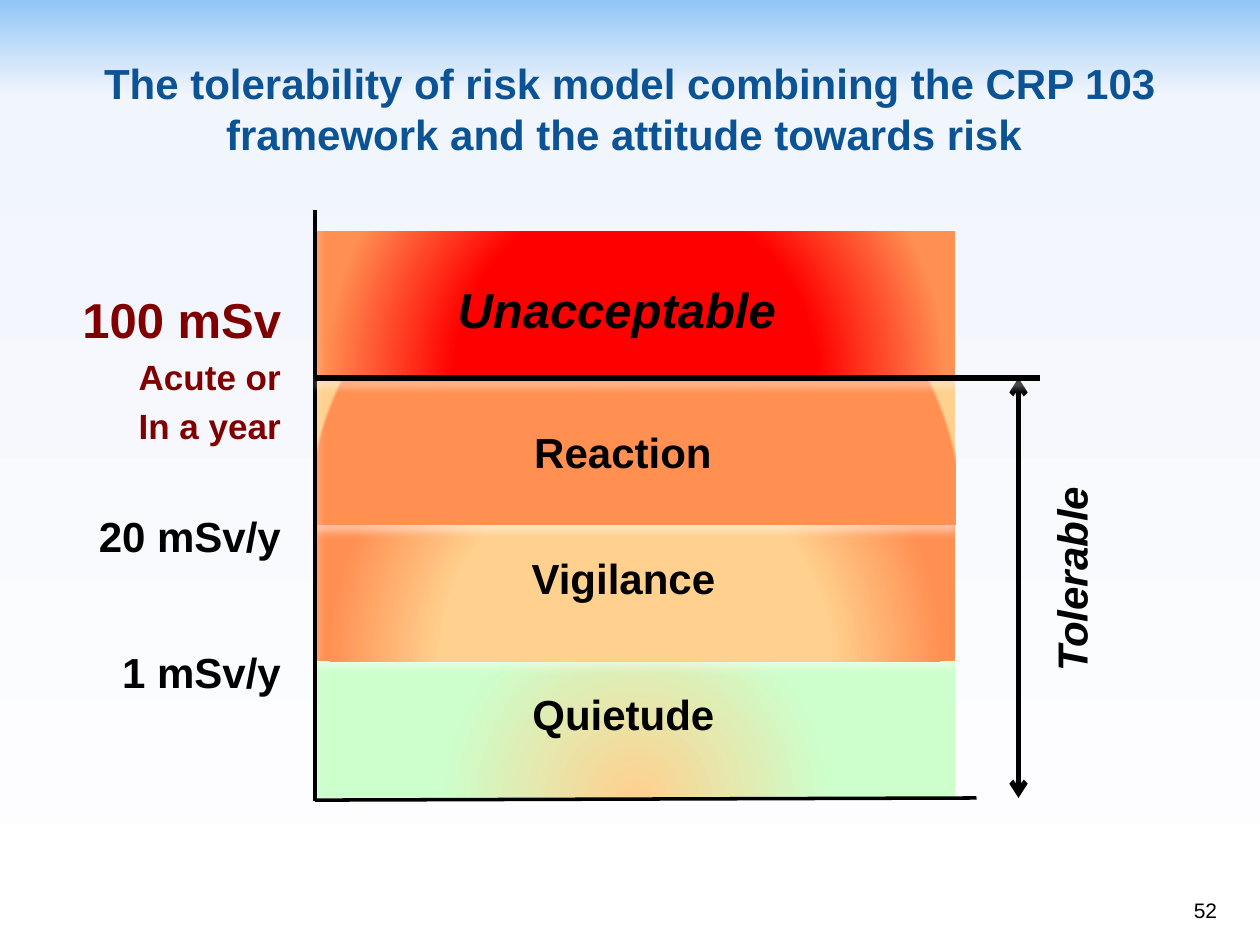
from lxml.etree import SubElement
from pptx import Presentation
from pptx.dml.color import RGBColor
from pptx.enum.shapes import MSO_CONNECTOR as Connector, MSO_SHAPE as Shape
from pptx.enum.text import MSO_ANCHOR as Anchor, PP_ALIGN as Align
from pptx.oxml.ns import qn
from pptx.util import Inches, Pt

BLACK = RGBColor(0x00, 0x00, 0x00)
WHITE = RGBColor(0xFF, 0xFF, 0xFF)
SKY = RGBColor(0x91, 0xC6, 0xF7)
MIST = RGBColor(0xF1, 0xF5, 0xFC)
NAVY = RGBColor(0x0B, 0x53, 0x94)
MAROON = RGBColor(0x80, 0x00, 0x00)
RED = RGBColor(0xFF, 0x00, 0x00)
ORANGE = RGBColor(0xFF, 0x90, 0x52)
SAND = RGBColor(0xFF, 0xD0, 0x8E)
MINT = RGBColor(0xCC, 0xFF, 0xCC)

COLUMNS, ROWS = 120, 90
AXIS, BAND_WIDTH, LIMIT, BASE = 30, 61, 36, 76
LABEL_LEFT, LABEL_WIDTH, LABEL_HEIGHT = 6, 21, 6.8


class RiskSlide:
    font = "Arial"

    def __init__(self, presentation):
        self.column = presentation.slide_width / COLUMNS
        self.row = presentation.slide_height / ROWS
        self.slide = presentation.slides.add_slide(presentation.slide_layouts[6])

    def place(self, left, top, width, height):
        return (round(left * self.column), round(top * self.row),
                round(width * self.column), round(height * self.row))

    def set_stops(self, owner, stops):
        """Replace the stops of the gradient inside owner and return the gradient."""
        gradient = owner.find(".//" + qn("a:gradFill"))
        stop_list = gradient.find(qn("a:gsLst"))
        for stop in list(stop_list):
            stop_list.remove(stop)
        for percent, color in stops:
            stop = SubElement(stop_list, qn("a:gs"), pos=str(percent * 1000))
            SubElement(stop, qn("a:srgbClr"), val=str(color))
        return gradient

    def background(self, stops):
        fill = self.slide.background.fill
        fill.gradient()
        fill.gradient_angle = 270
        self.set_stops(self.slide.element, stops)

    def add_glow(self, effects):
        """Give an effect list a soft pale shadow falling downwards."""
        shadow = SubElement(effects, qn("a:outerShdw"), blurRad=str(Pt(4.5)),
                            dist=str(Pt(3)), dir="5400000", rotWithShape="0")
        color = SubElement(shadow, qn("a:srgbClr"), val=str(WHITE))
        SubElement(color, qn("a:alpha"), val="48000")

    def band(self, top, height, stops):
        """Draw a band whose circular gradient starts at the middle of its base."""
        shape = self.slide.shapes.add_shape(
            Shape.RECTANGLE, *self.place(AXIS, top, BAND_WIDTH, height))
        shape.fill.gradient()
        gradient = self.set_stops(shape.element, stops)
        gradient.remove(gradient.find(qn("a:lin")))
        circle = SubElement(gradient, qn("a:path"), path="circle")
        SubElement(circle, qn("a:fillToRect"), l="50000", t="100000", r="50000")
        shape.line.fill.background()
        shape.shadow.inherit = False
        self.add_glow(shape.element.spPr.find(qn("a:effectLst")))

    def line(self, start, end, weight, arrows=False):
        connector = self.slide.shapes.add_connector(
            Connector.STRAIGHT, *self.place(*start, *end))
        connector.line.color.rgb = BLACK
        connector.line.width = Pt(weight)
        if arrows:
            outline = connector.line._get_or_add_ln()
            for tag in ("a:headEnd", "a:tailEnd"):
                SubElement(outline, qn(tag), type="arrow")
        self.add_glow(SubElement(connector.element.spPr, qn("a:effectLst")))

    def text(self, box, paragraphs, align=Align.CENTER, color=BLACK, bold=True,
             italic=False, anchor=Anchor.TOP, wrap=False, rotation=0,
             margins=(0, 0.05, 0.02, 0.05)):
        """Write paragraphs given as (text, size); a newline is a line break."""
        shape = self.slide.shapes.add_textbox(*self.place(*box))
        shape.rotation = rotation
        frame = shape.text_frame
        frame.word_wrap = wrap
        frame.vertical_anchor = anchor
        (frame.margin_left, frame.margin_top,
         frame.margin_right, frame.margin_bottom) = map(Inches, margins)
        for index, (content, size) in enumerate(paragraphs):
            paragraph = frame.add_paragraph() if index else frame.paragraphs[0]
            paragraph.alignment = align
            if index:
                paragraph.space_before = Pt(size / 5)
            for number, piece in enumerate(content.split("\n")):
                if number:
                    paragraph.add_line_break()
                run = paragraph.add_run()
                run.text = piece
                font = run.font
                font.name, font.size = self.font, Pt(size)
                font.bold, font.italic = bold, italic
                font.color.rgb = color


def main():
    presentation = Presentation()
    presentation.slide_width, presentation.slide_height = Inches(10), Inches(7.5)
    page = RiskSlide(presentation)
    page.background([(0, SKY), (10, MIST), (100, WHITE)])

    page.band(63, 13, [(0, SAND), (60, MINT)])
    page.band(49, 14, [(59, SAND), (94, ORANGE)])
    page.band(22, 14, [(55, RED), (95, ORANGE)])
    page.band(LIMIT, 14, [(99, ORANGE), (100, SAND)])

    page.line((AXIS, 20), (AXIS, 76.3), 2)
    page.line((AXIS, 76.2), (93, BASE), 2)

    page.text((LABEL_LEFT, 27, LABEL_WIDTH, 17),
              [("100 mSv", 28), ("Acute or", 20), ("In a year", 20)],
              Align.RIGHT, MAROON)
    for top, dose in ((48, "20 mSv/y"), (61, "1 mSv/y")):
        page.text((LABEL_LEFT, top, LABEL_WIDTH, LABEL_HEIGHT),
                  [(dose, 24)], Align.RIGHT)

    for left, top, width, attitude in ((44, 65, 31, "Quietude"),
                                       (39, 52, 41, "Vigilance"),
                                       (35, 40, 50, "Reaction ")):
        page.text((left, top, width, LABEL_HEIGHT), [(attitude, 24)])
    page.text((36, 26, 47, LABEL_HEIGHT), [("Unacceptable ", 28)], italic=True)

    page.text((0, 3, COLUMNS, 14),
              [("The tolerability of risk model combining the CRP 103\n"
                "framework and the attitude towards risk ", 24)],
              color=NAVY, anchor=Anchor.MIDDLE, wrap=True, margins=(0, 0.05, 0, 0))

    page.line((97, LIMIT), (97, BASE), 3, arrows=True)
    page.text((78.9, 51.1, 47, LABEL_HEIGHT), [("Tolerable ", 24)],
              italic=True, rotation=270)
    page.line((AXIS, LIMIT), (99, LIMIT), 3)
    page.text((92.1, 82.5, 25, 6), [("52", 12)], Align.RIGHT, bold=False,
              anchor=Anchor.BOTTOM, wrap=True, margins=(0.1, 0.05, 0.1, 0.05))

    presentation.save("out.pptx")


if __name__ == "__main__":
    main()
